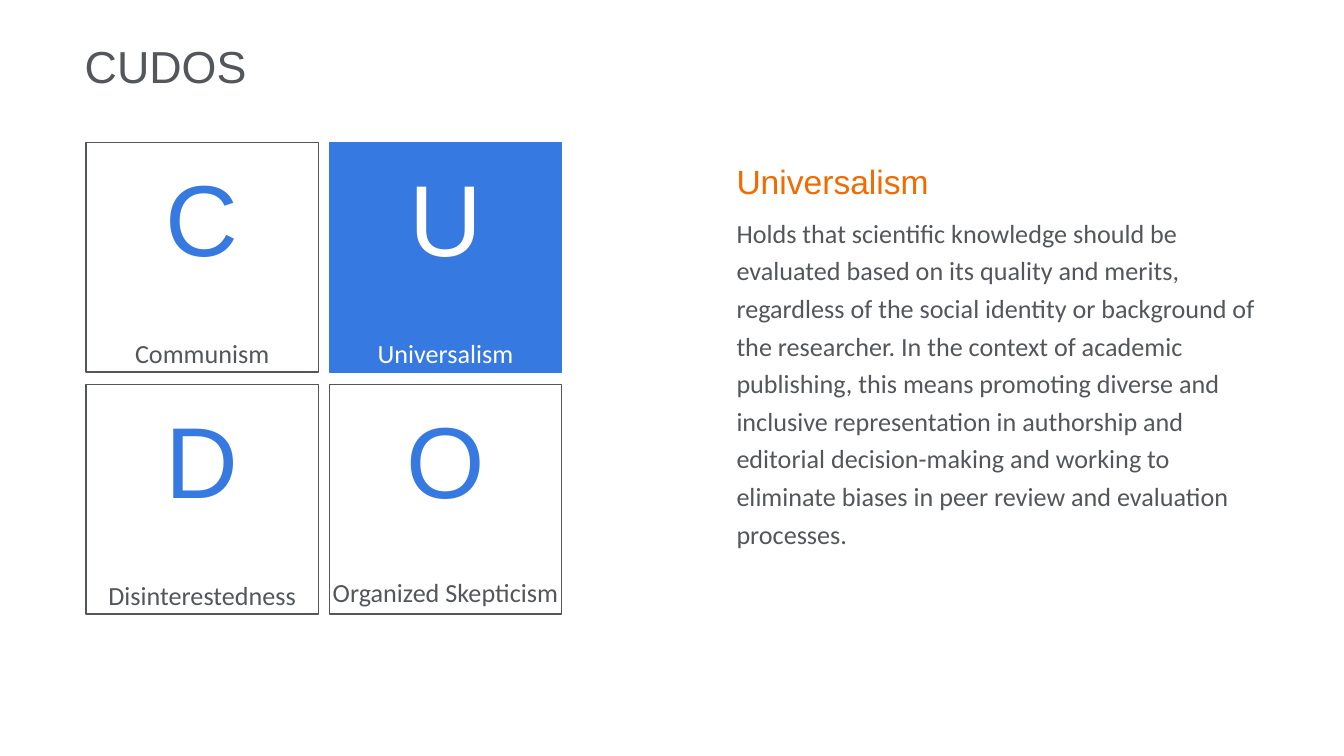
from pptx import Presentation
from pptx.dml.color import RGBColor
from pptx.enum.shapes import MSO_SHAPE
from pptx.enum.text import MSO_ANCHOR, MSO_AUTO_SIZE, PP_ALIGN
from pptx.util import Inches, Pt

RECTANGLE = MSO_SHAPE.RECTANGLE
TOP, MIDDLE = MSO_ANCHOR.TOP, MSO_ANCHOR.MIDDLE
LEFT, CENTER = PP_ALIGN.LEFT, PP_ALIGN.CENTER
NO_AUTOFIT = MSO_AUTO_SIZE.NONE
GRAY, BLUE, ORANGE, WHITE = "53565A", "3679E0", "F26B00", "FFFFFF"


def color(hex_string):
    return RGBColor.from_string(hex_string)


def write_text(shape, lines, align=LEFT, anchor=TOP, wrap=True):
    frame = shape.text_frame
    frame.auto_size = NO_AUTOFIT
    frame.word_wrap = wrap
    frame.vertical_anchor = anchor
    frame.margin_left = frame.margin_right = 0
    frame.margin_top = frame.margin_bottom = 0
    for index, (text, font_name, size, hex_string) in enumerate(lines):
        paragraph = frame.add_paragraph() if index else frame.paragraphs[0]
        paragraph.alignment = align
        run = paragraph.add_run()
        run.text = text
        run.font.name = font_name
        run.font.size = Pt(size)
        run.font.color.rgb = color(hex_string)
    return frame


presentation = Presentation()
presentation.slide_width = Inches(10)
presentation.slide_height = Inches(10 * 9 / 16)
slide = presentation.slides.add_slide(presentation.slide_layouts[5])
shapes = slide.shapes

title = shapes.title
title.left, title.top = Inches(0.63), Inches(0.21)
title.width, title.height = Inches(8.55), Inches(0.55)
write_text(title, [("CUDOS", "Arial", 24, GRAY)], anchor=MIDDLE)

tile_width, tile_height = 1.73, 1.71
grid_left, grid_top = 0.64, 1.06
column_step, row_step = 1.81, 1.8
norms = [
    ("C", "Communism", 0.47, 1.45),
    ("U", "Universalism", 0.83, 1.45),
    ("D", "Disinterestedness", 0.65, 1.45),
    ("O", "Organized Skepticism", 0.47, 1.43),
]
selected = "U"

for index, (letter, name, letter_width, name_offset) in enumerate(norms):
    row, column = divmod(index, 2)
    left = grid_left + column * column_step
    top = grid_top + row * row_step
    is_selected = letter == selected

    tile = shapes.add_shape(RECTANGLE, Inches(left), Inches(top),
                            Inches(tile_width), Inches(tile_height))
    tile.shadow.inherit = False
    tile.fill.solid()
    tile.fill.fore_color.rgb = color(BLUE if is_selected else WHITE)
    tile.line.color.rgb = color(BLUE if is_selected else GRAY)
    tile.line.width = Pt(0.75)

    letter_left = left + (tile_width - letter_width) / 2
    letter_box = shapes.add_textbox(Inches(letter_left), Inches(top + 0.1),
                                    Inches(letter_width), Inches(1.36))
    write_text(letter_box, [(letter, "Arial", 54, WHITE if is_selected else BLUE)],
               align=CENTER, wrap=False)

    name_box = shapes.add_textbox(Inches(left), Inches(top + name_offset),
                                  Inches(tile_width), Inches(0.27))
    write_text(name_box, [(name, "Calibri", 14, WHITE if is_selected else GRAY)],
               align=CENTER, wrap=False)

description = (
    "Holds that scientific knowledge should be evaluated based on its quality and merits, "
    "regardless of the social identity or background of the researcher. In the context of "
    "academic publishing, this means promoting diverse and inclusive representation in "
    "authorship and editorial decision-making and working to eliminate biases in peer "
    "review and evaluation processes."
)
description_box = shapes.add_textbox(Inches(5.48), Inches(1.14), Inches(3.89), Inches(3.6))
description_frame = write_text(description_box, [
    ("Universalism", "Arial", 18, ORANGE),
    (description, "Calibri", 14, GRAY),
])
for paragraph in description_frame.paragraphs:
    paragraph.line_spacing = 1.2
description_frame.paragraphs[1].space_before = Pt(5)

presentation.save("out.pptx")
